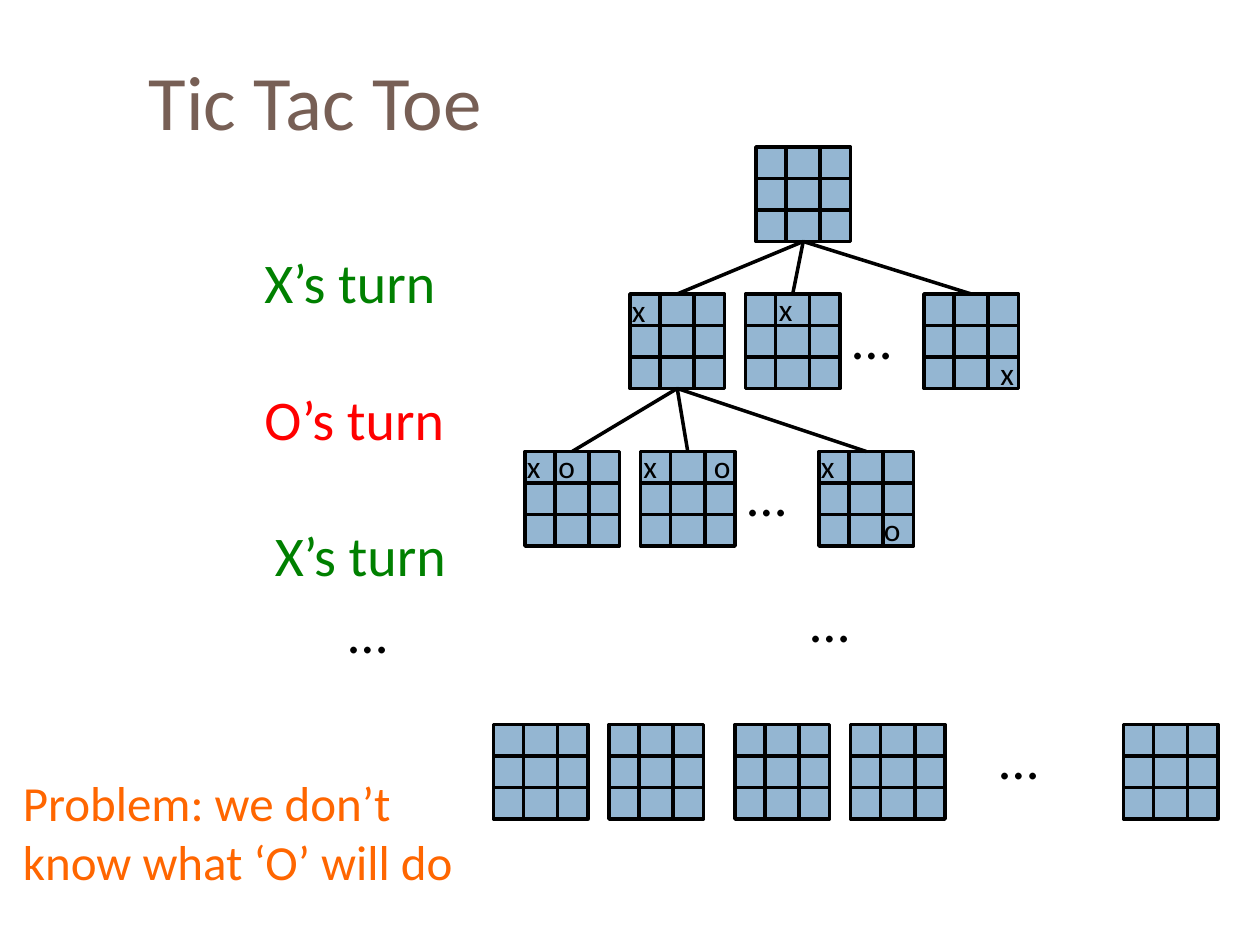
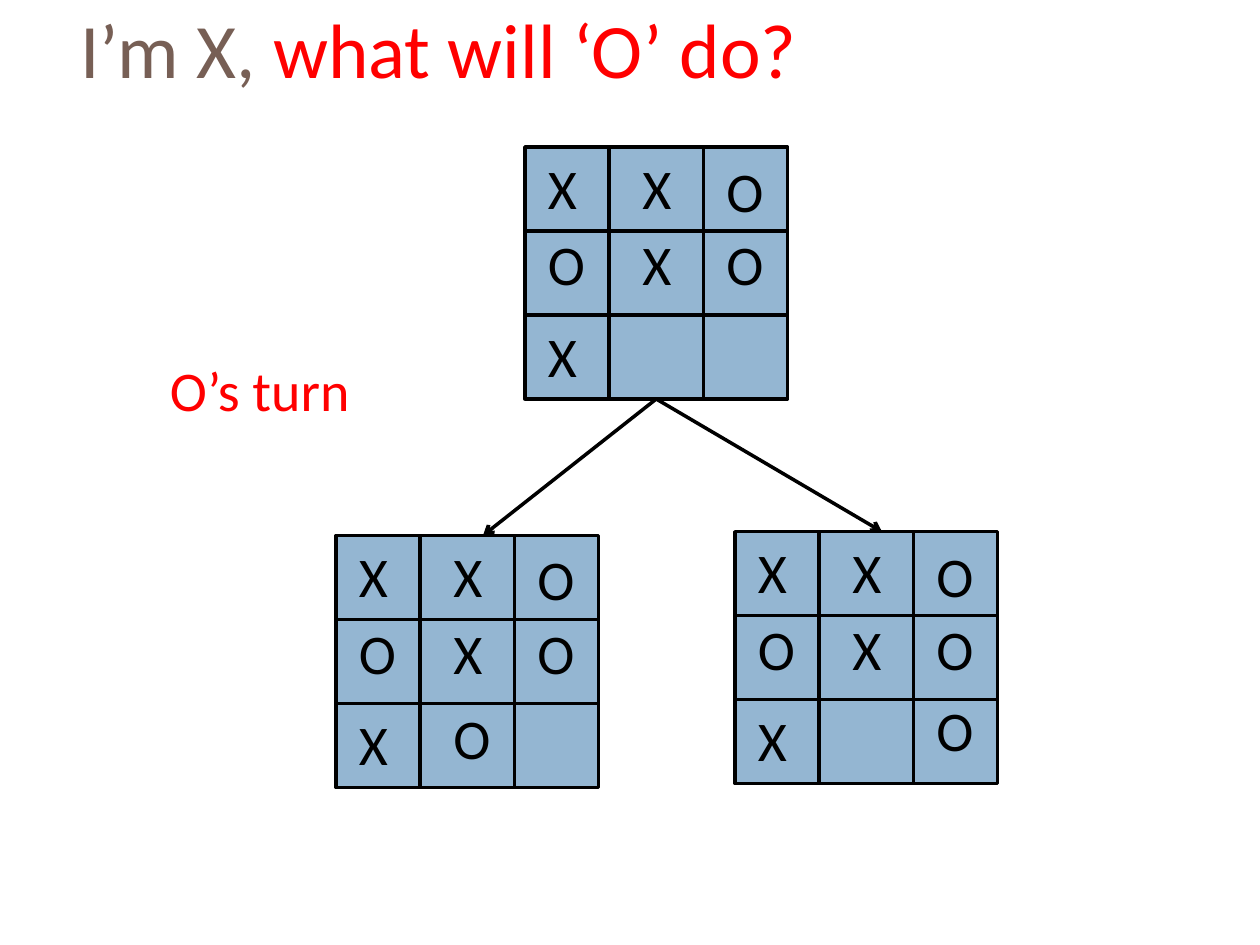
from lxml.etree import SubElement
from pptx import Presentation
from pptx.dml.color import RGBColor
from pptx.enum.shapes import MSO_CONNECTOR, MSO_SHAPE
from pptx.enum.text import MSO_ANCHOR as ANCHOR, MSO_AUTO_SIZE as FIT
from pptx.oxml.ns import qn
from pptx.util import Emu, Inches, Pt

BROWN = RGBColor(0x77, 0x5F, 0x55)
BLUE = RGBColor(0x94, 0xB6, 0xD2)
BLACK = RGBColor(0x00, 0x00, 0x00)
GREEN = RGBColor(0x00, 0x80, 0x00)
RED = RGBColor(0xFF, 0x00, 0x00)
ORANGE = RGBColor(0xFF, 0x66, 0x00)

prs = Presentation()
prs.slide_width, prs.slide_height = Inches(10), Inches(7.5)
COLS, ROWS = 120, 90
COL, ROW = prs.slide_width / COLS, prs.slide_height / ROWS
COL_CUTS = (0.32, 0.68)
ROW_CUTS = (1 / 3, 2 / 3)
TITLE = dict(size=44, color=BROWN, anchor=ANCHOR.MIDDLE, fit=FIT.NONE)
SMALL_MARK = dict(size=18, wrap=False)


def write(slide, text, x, y, w, h, size=32, color=BLACK, wrap=True,
          anchor=ANCHOR.TOP, fit=FIT.SHAPE_TO_FIT_TEXT, more=()):
    sp = slide.shapes.add_textbox(Emu(round(x * COL)), Emu(round(y * ROW)),
                                  Emu(round(w * COL)), Emu(round(h * ROW)))
    tf = sp.text_frame
    tf.word_wrap = wrap
    tf.auto_size = fit
    tf.vertical_anchor = anchor
    for run_text, run_color in [(text, color), *more]:
        r = tf.paragraphs[0].add_run()
        r.text = run_text
        r.font.name = "Calibri"
        r.font.size = Pt(size)
        r.font.color.rgb = run_color


def draw_line(slide, x1, y1, x2, y2, arrow=False):
    cn = slide.shapes.add_connector(
        MSO_CONNECTOR.STRAIGHT, Emu(round(x1 * COL)), Emu(round(y1 * ROW)),
        Emu(round(x2 * COL)), Emu(round(y2 * ROW)))
    cn.line.color.rgb = BLACK
    cn.line.width = Pt(2)
    if arrow:
        SubElement(cn.line._get_or_add_ln(), qn("a:tailEnd"), type="arrow")
    SubElement(cn._element.spPr, qn("a:effectLst"))


tree, choice = [prs.slides.add_slide(prs.slide_layouts[6]) for _ in range(2)]

write(tree, "Tic Tac Toe", 13, 3, 107, 13, **TITLE)
write(choice, "I’m X, ", 6.5, -2, 107, 13, more=[("what will ‘O’ do?", RED)], **TITLE)

SMALL, WIDE, TALL = 9, 25, 24
root = (72, 14)
x_moves = [(x, 28) for x in (60, 71, 88)]
o_moves = [(x, 43) for x in (50, 61, 78)]
endings = [(x, 69) for x in (47, 58, 70, 81, 107)]
start, left, right = (50, 14), (32, 51), (70, 50.64)

boards = [(tree, x, y, SMALL, SMALL) for x, y in [root, *x_moves, *o_moves, *endings]]
boards += [(choice, x, y, WIDE, TALL) for x, y in (right, left, start)]
for slide, x, y, w, h in boards:
    sp = slide.shapes.add_shape(MSO_SHAPE.RECTANGLE, Emu(round(x * COL)), Emu(round(y * ROW)),
                                Emu(round(w * COL)), Emu(round(h * ROW)))
    sp.shadow.inherit = False
    sp.fill.solid()
    sp.fill.fore_color.rgb = BLUE
    sp.line.color.rgb = BLACK
    sp.line.width = Pt(2)
    for cut in COL_CUTS:
        draw_line(slide, x + cut * w, y, x + cut * w, y + h)
    for cut in ROW_CUTS:
        draw_line(slide, x + w, y + cut * h, x, y + cut * h)

for (px, py), children in ((root, x_moves), (x_moves[0], o_moves)):
    for x, y in children:
        draw_line(tree, px + SMALL / 2, py + SMALL, x + SMALL / 2, y)

for x, y in ((80, 28.3), (70, 43.3), (76, 55.3), (94, 68.3), (32, 56.3)):
    write(tree, "…", x, y, 11, 7.7)

for mark, x, y in (("x", 59, 27.1), ("x", 73, 27), ("x", 94.1, 33.1),
                   ("x", 49, 42), ("x", 60.1, 42), ("x", 77, 42),
                   ("o", 52, 42), ("o", 66.8, 42), ("o", 83, 48)):
    write(tree, mark, x, y, 4, 4.8, **SMALL_MARK)

for slide, player, x, y, color in ((tree, "X", 24, 23, GREEN), (tree, "O", 24, 36, RED),
                                   (tree, "X", 25, 49, GREEN), (choice, "O", 15, 33.3, RED)):
    write(slide, f"{player}’s turn", x, y, 22, 7.7, color=color)

write(tree, "Problem: we don’t know what ‘O’ will do", 1, 73, 44, 12.5, size=28, color=ORANGE)

MARK_COLS = (1, 10, 18)
played = [("X", 0, 0), ("X", 1, 0), ("O", 2, 0.3),
          ("O", 0, 7.3), ("X", 1, 7.3), ("O", 2, 7.3), ("X", 0, 16)]
for (x, y), replies in ((start, []), (left, [("O", 1, 15.4)]), (right, [("O", 2, 15)])):
    for mark, col, dy in played + replies:
        write(choice, mark, x + MARK_COLS[col], y + dy, 8, 7.7)

for x, y in ((46, left[1]), (84, right[1])):
    draw_line(choice, start[0] + WIDE / 2, start[1] + TALL, x, y, arrow=True)

prs.save("out.pptx")
